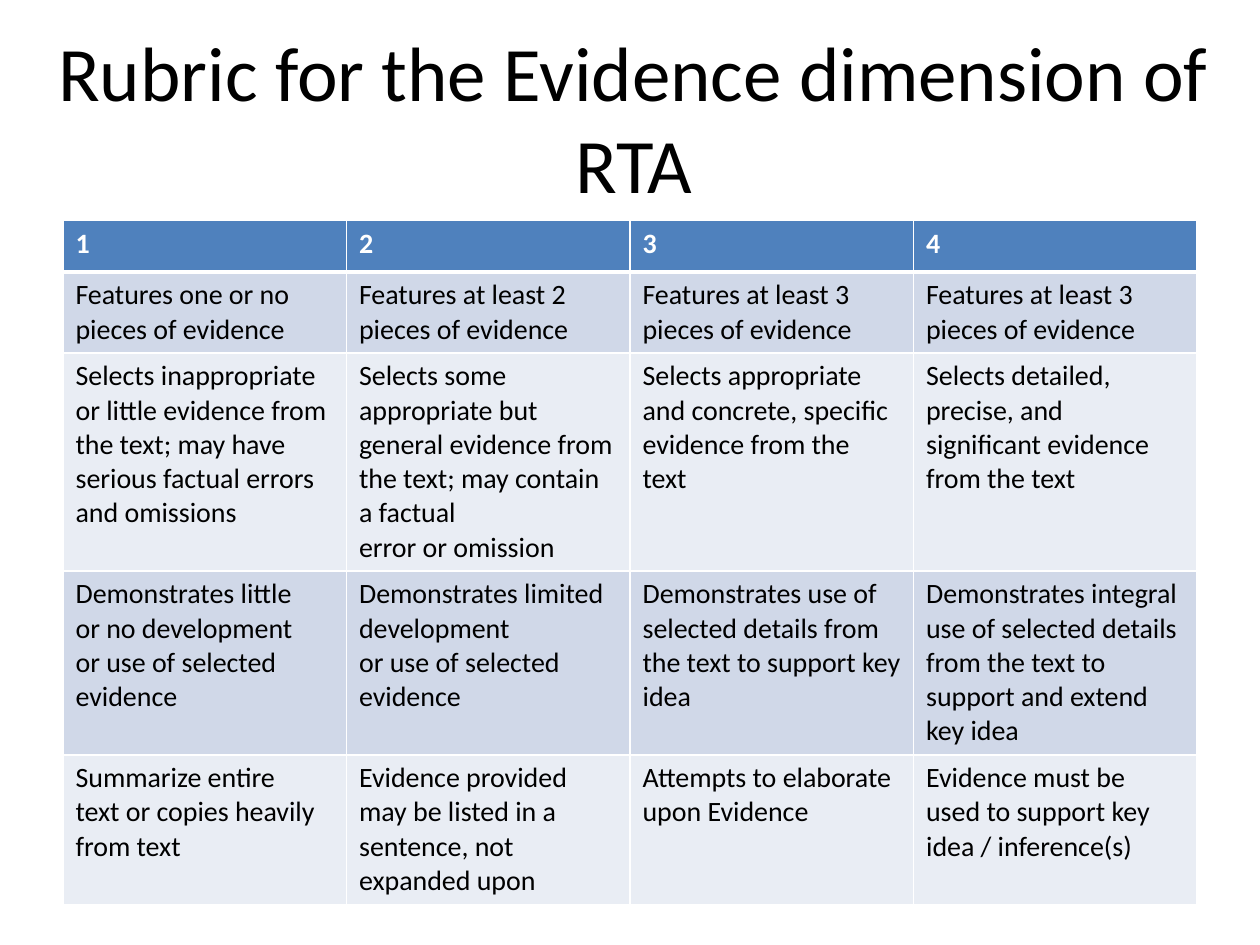
from lxml import etree
from pptx import Presentation
from pptx import util as u
from pptx.dml.color import RGBColor
from pptx.enum import text
from pptx.oxml import ns

TITLE = "Rubric for the Evidence dimension of RTA"
SCORES = ["1", "2", "3", "4"]
CRITERIA = [
    ["Features one or no\npieces of evidence",
     "Features at least 2\npieces of evidence",
     "Features at least 3\npieces of evidence",
     "Features at least 3\npieces of evidence"],
    ["Selects inappropriate or little evidence from the text; "
     "may have serious factual errors and omissions",
     "Selects some appropriate but general evidence from the text; "
     "may contain a factual\nerror or omission",
     "Selects appropriate\nand concrete, specific evidence from the\ntext",
     "Selects detailed, precise, and significant evidence from the text"],
    ["Demonstrates little\nor no development\nor use of selected\nevidence",
     "Demonstrates limited development\nor use of selected\nevidence",
     "Demonstrates use of selected details from the text to support key idea",
     "Demonstrates integral use of selected details from the text "
     "to support and extend key idea"],
    ["Summarize entire\ntext or copies heavily from text",
     "Evidence provided may be listed in a sentence, not expanded upon",
     "Attempts to elaborate upon Evidence",
     "Evidence must be\nused to support key\nidea / inference(s)"],
]

FONT = "Calibri"
BLACK = RGBColor(0x00, 0x00, 0x00)
WHITE = RGBColor(0xFF, 0xFF, 0xFF)
HEADER_BLUE = RGBColor(0x4F, 0x81, 0xBD)
BANDS = [RGBColor(0xD0, 0xD8, 0xE8), RGBColor(0xE9, 0xED, 0xF4)]


def format_text(frame, size, color, bold=False):
    for para in frame.paragraphs:
        for span in para.runs:
            span.font.name = FONT
            span.font.size = u.Pt(size)
            span.font.bold = bold
            span.font.color.rgb = color


def add_borders(cell, bottom_width):
    properties = cell._tc.get_or_add_tcPr()
    widths = {"lnL": 1, "lnR": 1, "lnT": 1, "lnB": bottom_width}
    for index, (side, width) in enumerate(widths.items()):
        line = etree.Element(ns.qn(f"a:{side}"), w=str(u.Pt(width)))
        fill = etree.SubElement(line, ns.qn("a:solidFill"))
        etree.SubElement(fill, ns.qn("a:srgbClr"), val=str(WHITE))
        properties.insert(index, line)


def add_title(page):
    title = page.shapes.title
    title.left, title.top = u.Cm(0.36), u.Cm(0.76)
    title.width, title.height = u.Cm(24.84), u.Cm(3.18)
    frame = title.text_frame
    frame.text = TITLE
    frame.word_wrap = True
    frame.vertical_anchor = text.MSO_ANCHOR.MIDDLE
    frame.paragraphs[0].alignment = text.PP_ALIGN.CENTER
    format_text(frame, 44, BLACK)


def add_rubric(page):
    rows = [SCORES] + CRITERIA
    holder = page.shapes.add_table(len(rows), len(SCORES), u.Cm(1.27),
                                   u.Cm(4.45), u.Cm(22.86), u.Cm(13.56))
    table = holder.table
    for row_index, entries in enumerate(rows):
        is_header = row_index == 0
        table.rows[row_index].height = u.Cm(1.03)
        for column, entry in enumerate(entries):
            cell = table.cell(row_index, column)
            cell.text_frame.text = entry
            format_text(cell.text_frame, 16, WHITE if is_header else BLACK, is_header)
            cell.fill.solid()
            cell.fill.fore_color.rgb = (
                HEADER_BLUE if is_header else BANDS[(row_index - 1) % 2])
            add_borders(cell, 3 if is_header else 1)
    for row_index in (1,):
        for cell in table.rows[row_index].cells:
            top = cell._tc.tcPr.find(ns.qn("a:lnT"))
            top.set("w", str(u.Pt(3)))
    holder.height = u.Cm(13.56)


def main():
    deck = Presentation()
    deck.slide_width, deck.slide_height = u.Cm(25.4), u.Cm(19.05)
    page = deck.slides.add_slide(deck.slide_layouts[5])
    add_title(page)
    add_rubric(page)
    deck.save("out.pptx")


if __name__ == "__main__":
    main()
